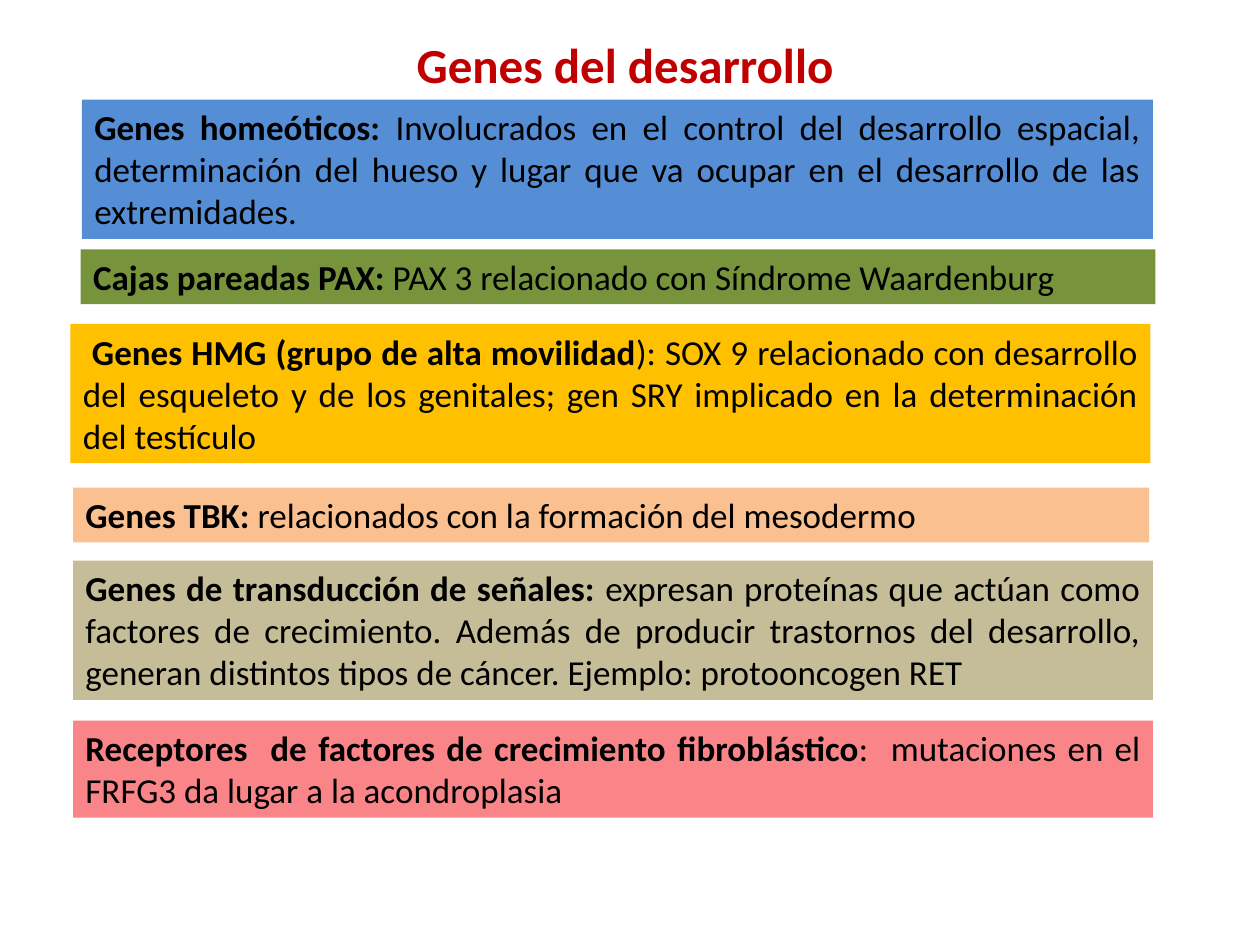
from pptx import Presentation
from pptx.dml.color import RGBColor
from pptx.enum.shapes import MSO_SHAPE
from pptx.enum.text import MSO_ANCHOR, MSO_AUTO_SIZE, PP_ALIGN
from pptx.util import Inches, Pt

RECT = MSO_SHAPE.RECTANGLE
TOP = MSO_ANCHOR.TOP
NO_FIT = MSO_AUTO_SIZE.NONE
LEFT, CENTER, JUSTIFY = PP_ALIGN.LEFT, PP_ALIGN.CENTER, PP_ALIGN.JUSTIFY
TITLE_ONLY = 5


def rgb(color):
    return RGBColor.from_string(color)


class GeneSlide:
    """Style and current slide; lengths are in cells of a 100 x 75 grid."""
    font, title_size, body_size = "Calibri", 28, 20
    title_color, text_color = "C00000", "000000"
    line_rows, padding_rows = 3.35, 1

    def __init__(self, prs):
        self.col = prs.slide_width / 100
        self.row = prs.slide_height / 75
        self.s = prs.slides.add_slide(prs.slide_layouts[TITLE_ONLY])

    def box(self, x, y, w, h):
        return (round(x * self.col), round(y * self.row),
                round(w * self.col), round(h * self.row))

    def format(self, tf, size, color, align):
        tf.word_wrap = True
        tf.auto_size = NO_FIT
        tf.vertical_anchor = TOP
        p = tf.paragraphs[0]
        p.alignment = align
        p.font.name, p.font.size = self.font, Pt(size)
        p.font.color.rgb = rgb(color)
        return p

    def title(self, text, x, y, w, h):
        sp = self.s.shapes.title
        sp.left, sp.top, sp.width, sp.height = self.box(x, y, w, h)
        sp.text_frame.text = text
        p = self.format(sp.text_frame, self.title_size, self.title_color, CENTER)
        p.font.bold = True

    def panel(self, x, y, w, lines, fill, term, text, align=JUSTIFY):
        # Height follows from the number of text lines
        h = lines * self.line_rows + self.padding_rows
        sp = self.s.shapes.add_shape(RECT, *self.box(x, y, w, h))
        sp.shadow.inherit = False
        sp.fill.solid()
        sp.fill.fore_color.rgb = rgb(fill)
        sp.line.fill.background()
        p = self.format(sp.text_frame, self.body_size, self.text_color, align)
        for words, bold in ((term, True), (text, False)):
            r = p.add_run()
            r.text, r.font.bold = words, bold


# Gene families: left, top, width, text lines, fill, term, description, alignment
PANELS = [
    (6.5, 7.9, 85, 3, "558ED5", "Genes homeóticos: ",
     "Involucrados en el control del desarrollo espacial, determinación del "
     "hueso y lugar que va ocupar en el desarrollo de las extremidades.", JUSTIFY),
    (6.4, 19.8, 85.3, 1, "77933C", "Cajas pareadas PAX: ",
     "PAX 3 relacionado con Síndrome Waardenburg", JUSTIFY),
    (5.6, 25.7, 85.7, 3, "FFC000", " Genes HMG (grupo de alta movilidad",
     "): SOX 9 relacionado con desarrollo del esqueleto y de los genitales; "
     "gen SRY implicado en la determinación del testículo", JUSTIFY),
    (5.8, 38.7, 85.4, 1, "FAC090", "Genes TBK: ",
     "relacionados con la formación del mesodermo", LEFT),
    (5.8, 44.5, 85.7, 3, "C4BD97", "Genes de transducción de señales: ",
     "expresan proteínas que actúan como factores de crecimiento. Además de "
     "producir trastornos del desarrollo, generan distintos tipos de cáncer. "
     "Ejemplo: protooncogen RET", JUSTIFY),
    (5.8, 57.2, 85.7, 2, "F98588",
     "Receptores  de factores de crecimiento fibroblástico",
     ":  mutaciones en el FRFG3 da lugar a la acondroplasia", JUSTIFY),
]


def main():
    prs = Presentation()
    prs.slide_width, prs.slide_height = Inches(10), Inches(7.5)
    slide = GeneSlide(prs)

    # Heading
    slide.title("Genes del desarrollo", 24, 2.2, 51.2, 5.7)

    # One coloured panel per gene family
    for panel in PANELS:
        slide.panel(*panel)

    prs.save("out.pptx")


if __name__ == "__main__":
    main()
